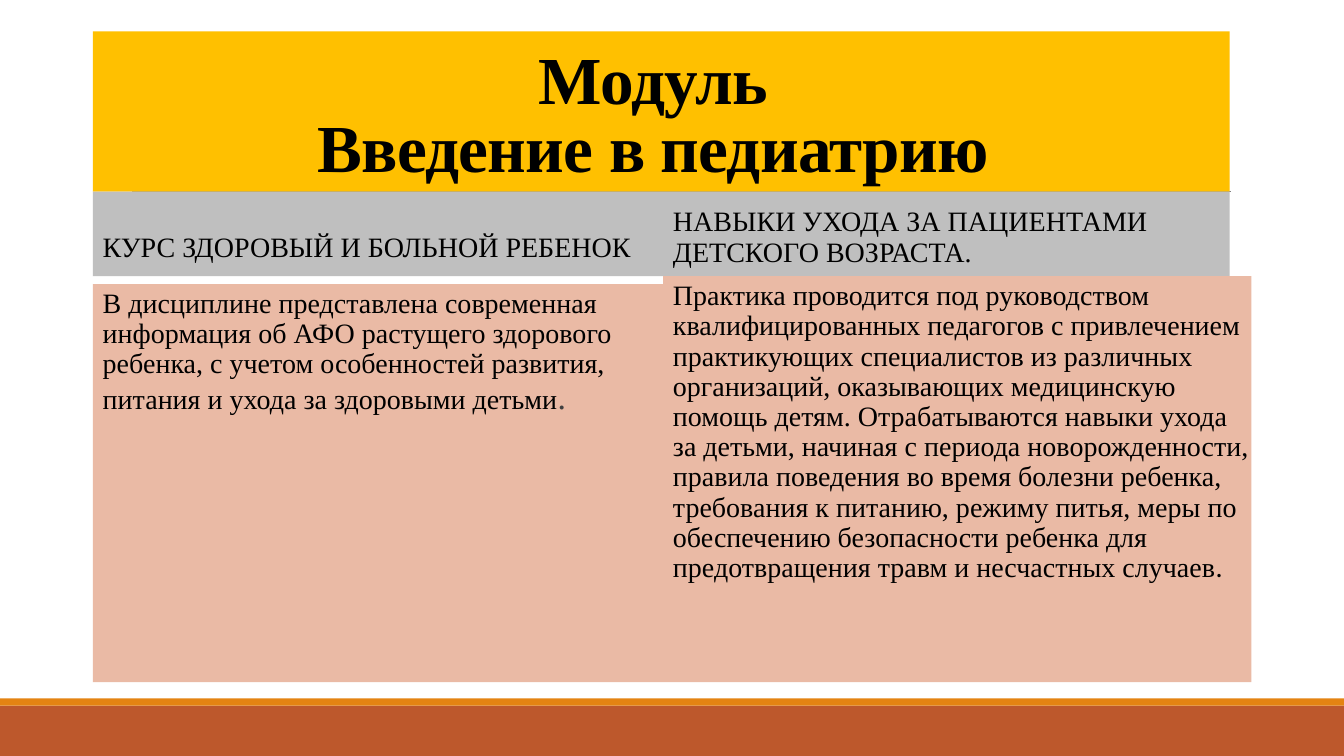
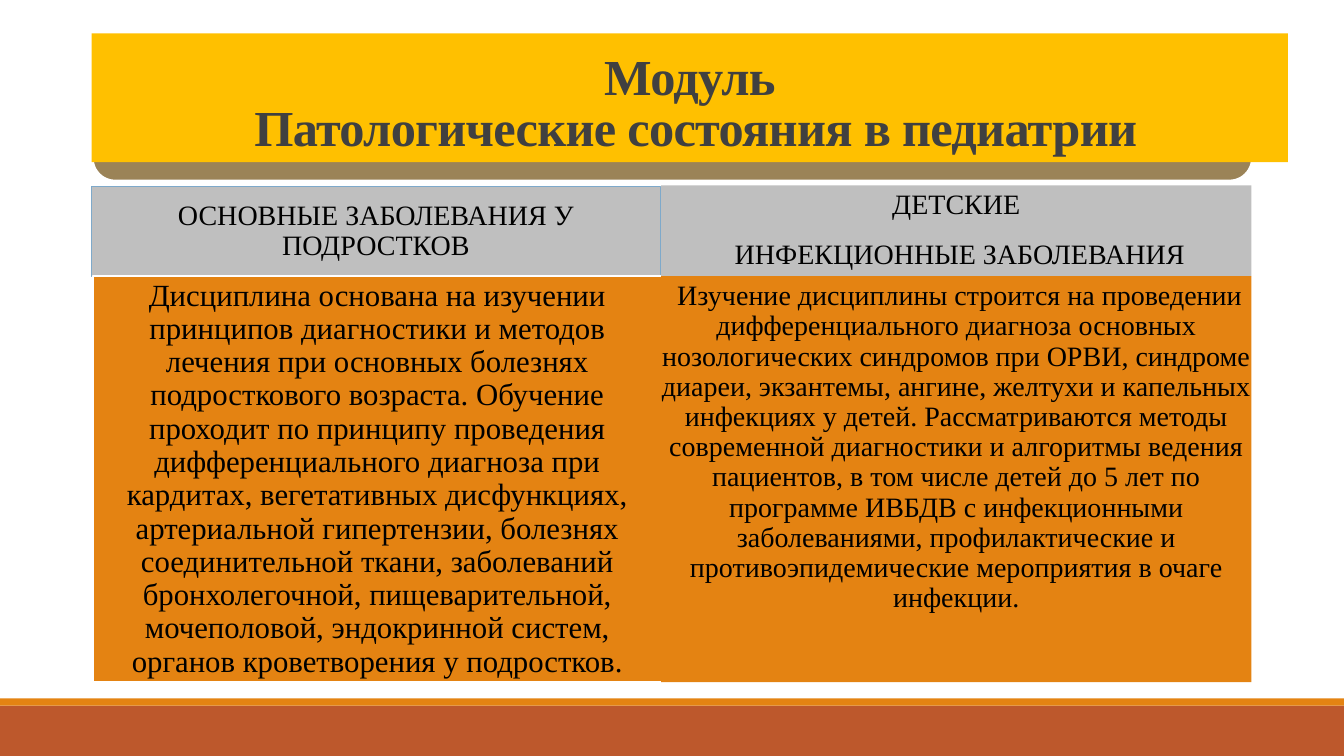
from dataclasses import dataclass

from lxml import etree
from pptx import Presentation
from pptx.dml.color import RGBColor
from pptx.enum.shapes import MSO_CONNECTOR, MSO_SHAPE
from pptx.enum.text import MSO_ANCHOR, PP_ALIGN
from pptx.oxml.ns import qn
from pptx.util import Cm, Pt

RECT, ROUNDED = MSO_SHAPE.RECTANGLE, MSO_SHAPE.ROUNDED_RECTANGLE
STRAIGHT = MSO_CONNECTOR.STRAIGHT
TOP, MIDDLE, BOTTOM = MSO_ANCHOR.TOP, MSO_ANCHOR.MIDDLE, MSO_ANCHOR.BOTTOM
LEFT, CENTER = PP_ALIGN.LEFT, PP_ALIGN.CENTER


@dataclass(frozen=True)
class Theme:
    # Colours
    ink: str = "000000"
    dark_gray: str = "404040"
    rule: str = "808080"
    white: str = "FFFFFF"
    title_fill: str = "FFC000"
    header_fill: str = "BFBFBF"
    header_edge: str = "7EA9CA"
    peach: str = "EABAA5"
    orange: str = "E48312"
    brick: str = "BD582C"
    olive: str = "9B8357"
    # Type
    font: str = "Times New Roman"
    dot_font: str = "Calibri"
    title_size: int = 48
    long_title_size: int = 36
    dot_size: int = 24
    dense_size: int = 22
    text_size: int = 20
    title_spacing: float = 0.85
    text_spacing: float = 0.9
    title_tracking: str = "-50"
    paragraph_gap: int = 14


THEME = Theme()
WIDTH, HEIGHT = 33.87, 19.05
MARGIN = 2.34
INSETS = (0.25, 0.13, 0.25, 0.13)
LIST_INSETS = (0.25, 0.13, 0, 0.13)
FLUSH_INSETS = (0, 0.13, 0, 0.13)
EVEN_INSETS = (0.23,) * 4


class Deck:
    def __init__(self, theme):
        self.theme = theme
        self.presentation = Presentation()
        self.presentation.slide_width = Cm(WIDTH)
        self.presentation.slide_height = Cm(HEIGHT)
        self.slide = None

    def new_slide(self):
        """Start a slide with the shared footer bands and title rule."""
        layout = self.presentation.slide_layouts[6]
        self.slide = self.presentation.slides.add_slide(layout)
        self.panel((0, 17.78, WIDTH, 1.27), self.theme.brick)
        self.panel((0, 17.6, WIDTH, 0.18), self.theme.orange)
        rule = self.slide.shapes.add_connector(
            STRAIGHT, Cm(3.33), Cm(4.83), Cm(31.01), Cm(4.83))
        rule.line.color.rgb = RGBColor.from_string(self.theme.rule)
        rule.line.width = Pt(0.5)
        etree.SubElement(rule._element.spPr, qn("a:effectLst"))

    def panel(self, box, fill, edge=None, edge_width=1.25, outline=RECT):
        panel = self.slide.shapes.add_shape(outline, *map(Cm, box))
        panel.shadow.inherit = False
        panel.fill.solid()
        panel.fill.fore_color.rgb = RGBColor.from_string(fill)
        if edge:
            panel.line.color.rgb = RGBColor.from_string(edge)
            panel.line.width = Pt(edge_width)
        else:
            panel.line.fill.background()
        return panel

    def fill_text(self, panel, paragraphs, size, align=LEFT, anchor=TOP,
                  insets=INSETS, spacing=None, color=None):
        """Fill a panel with paragraphs and return them."""
        frame = panel.text_frame
        frame.word_wrap = True
        frame.vertical_anchor = anchor
        (frame.margin_left, frame.margin_top,
         frame.margin_right, frame.margin_bottom) = map(Cm, insets)
        for index, text in enumerate(paragraphs):
            paragraph = frame.add_paragraph() if index else frame.paragraphs[0]
            paragraph.text = text
            paragraph.alignment = align
            paragraph.line_spacing = spacing or self.theme.text_spacing
            paragraph.space_before = Pt(self.theme.paragraph_gap if index else 0)
            self.style(paragraph.font, self.theme.font, size, color or self.theme.ink)
        return frame.paragraphs

    def style(self, font, name, size, color):
        font.name = name
        font.size = Pt(size)
        font.color.rgb = RGBColor.from_string(color)

    def title(self, box, text, size, color):
        panel = self.panel(box, self.theme.title_fill)
        heading = self.fill_text(panel, [text], size, CENTER, BOTTOM,
                                 spacing=self.theme.title_spacing, color=color)[0]
        heading.font.bold = True
        heading.font._rPr.set("spc", self.theme.title_tracking)

    def header(self, box, paragraphs, align=LEFT, anchor=MIDDLE, insets=INSETS,
               edge=None):
        panel = self.panel(box, self.theme.header_fill, edge, 0.75)
        self.fill_text(panel, paragraphs, self.theme.text_size, align, anchor, insets)

    def body(self, box, text, fill, size=None, edge=None, full_stop=None, **layout):
        """Add a description; full_stop is the (font, size, colour) of its last dot."""
        panel = self.panel(box, fill, edge)
        description = self.fill_text(
            panel, [text], size or self.theme.text_size, **layout)[0]
        if full_stop:
            dot = description.add_run()
            dot.text = "."
            self.style(dot.font, *full_stop)


def introduction(deck):
    theme = deck.theme
    middle = 16.71
    deck.new_slide()
    deck.title((MARGIN, 0.79, 28.65, 4.04), "Модуль \vВведение в педиатрию ",
               theme.title_size, theme.ink)

    # Course
    deck.header((MARGIN, 4.83, 14.37, 2.13), ["КУРС ЗДОРОВЫЙ И БОЛЬНОЙ РЕБЕНОК"],
                anchor=BOTTOM, insets=(0.25, 0.13, 0.25, 0.33))
    deck.body(
        (MARGIN, 7.16, 14.37, 10.03),
        "В дисциплине представлена современная информация об АФО растущего "
        "здорового ребенка, с учетом особенностей развития, питания и ухода за "
        "здоровыми детьми",
        theme.peach, insets=LIST_INSETS,
        full_stop=(theme.font, theme.dot_size, theme.dark_gray))

    # Practice
    deck.header((middle, 4.83, 14.28, 2.33),
                ["НАВЫКИ УХОДА ЗА ПАЦИЕНТАМИ ДЕТСКОГО ВОЗРАСТА."])
    deck.body(
        (middle, 6.96, 14.83, 10.23),
        "Практика проводится под руководством квалифицированных педагогов с "
        "привлечением практикующих специалистов из различных организаций, "
        "оказывающих медицинскую помощь детям. Отрабатываются навыки ухода за "
        "детьми, начиная с периода новорожденности, правила поведения во время "
        "болезни ребенка, требования к питанию, режиму питья, меры по обеспечению "
        "безопасности ребенка для предотвращения травм и несчастных случаев",
        theme.peach, insets=LIST_INSETS,
        full_stop=(theme.dot_font, theme.text_size, theme.ink))


def pathology(deck):
    theme = deck.theme
    middle = 16.66
    deck.new_slide()
    deck.panel((MARGIN, 1.17, 29.21, 3.38), theme.olive, theme.white, outline=ROUNDED)
    deck.title((2.31, 0.84, 30.15, 3.25),
               "Модуль\v Патологические состояния в педиатрии",
               theme.long_title_size, theme.dark_gray)

    # Adolescent diseases
    deck.header((2.31, 4.7, 14.33, 2.26), ["ОСНОВНЫЕ ЗАБОЛЕВАНИЯ У ПОДРОСТКОВ"],
                CENTER, edge=theme.header_edge)
    deck.body(
        (MARGIN, 6.96, 14.33, 10.23),
        "Дисциплина основана на изучении принципов диагностики и методов лечения "
        "при основных болезнях подросткового возраста. Обучение проходит по "
        "принципу проведения дифференциального диагноза при кардитах, вегетативных "
        "дисфункциях, артериальной гипертензии, болезнях соединительной ткани, "
        "заболеваний бронхолегочной, пищеварительной, мочеполовой, эндокринной "
        "систем, органов кроветворения у подростков.",
        theme.orange, theme.dense_size, theme.white,
        align=CENTER, anchor=MIDDLE, insets=EVEN_INSETS)

    # Childhood infections
    deck.header((middle, 4.67, 14.88, 2.29),
                ["ДЕТСКИЕ", " ИНФЕКЦИОННЫЕ ЗАБОЛЕВАНИЯ"], CENTER)
    deck.body(
        (middle, 6.96, 14.88, 10.23),
        " Изучение дисциплины строится на проведении дифференциального диагноза "
        "основных нозологических синдромов при ОРВИ, синдроме диареи, экзантемы, "
        "ангине, желтухи и капельных инфекциях у детей. Рассматриваются методы "
        "современной диагностики и алгоритмы ведения пациентов, в том числе детей "
        "до 5 лет по программе ИВБДВ с инфекционными заболеваниями, "
        "профилактические и противоэпидемические мероприятия в очаге инфекции.",
        theme.orange, align=CENTER, insets=FLUSH_INSETS)


def main():
    deck = Deck(THEME)
    introduction(deck)
    pathology(deck)
    deck.presentation.save("out.pptx")


if __name__ == "__main__":
    main()
